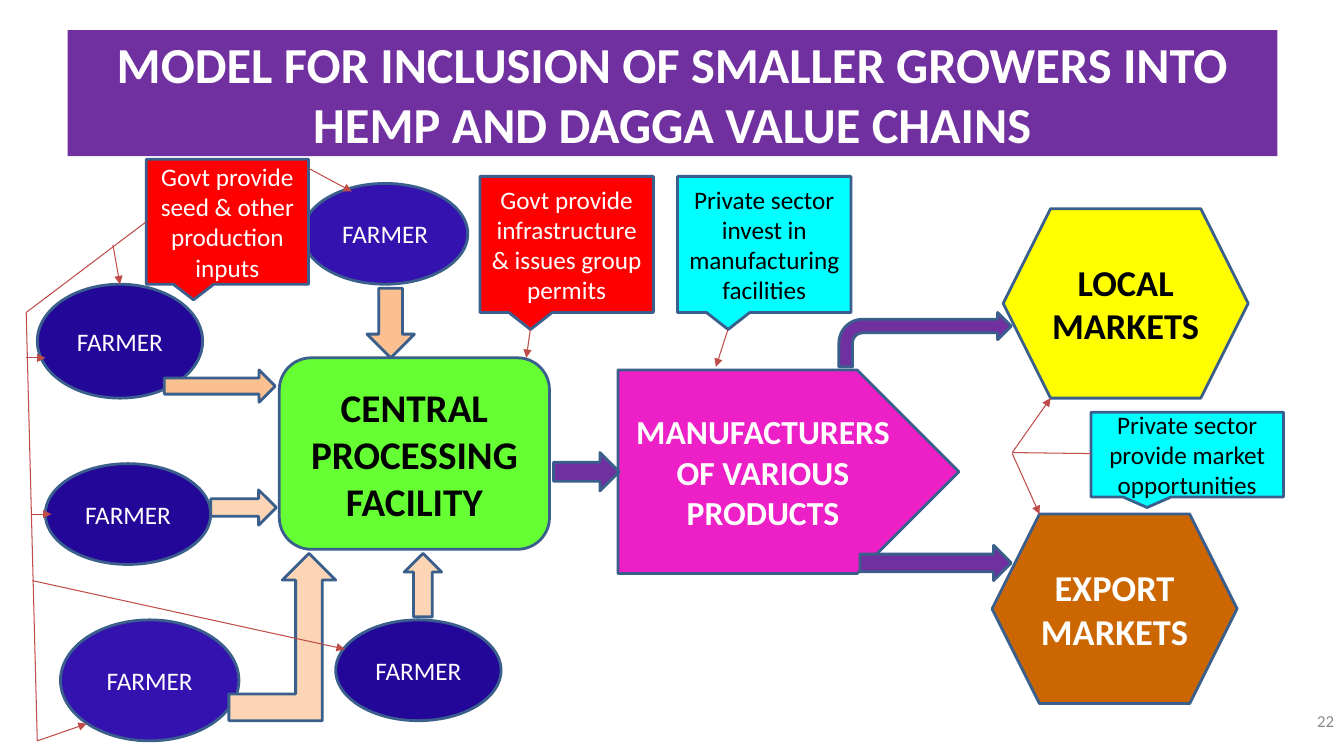
from typing import NamedTuple

import pptx
import pptx.dml.color
import pptx.enum.shapes
import pptx.enum.text
import pptx.oxml
import pptx.oxml.ns
import pptx.util

Inches = pptx.util.Inches
Pt = pptx.util.Pt
SHAPE = pptx.enum.shapes.MSO_SHAPE
ALIGN = pptx.enum.text.PP_ALIGN
MIDDLE = pptx.enum.text.MSO_ANCHOR.MIDDLE

FONT = "Calibri"
COLORS = {
    "white": "FFFFFF", "black": "000000", "gray": "8C8C8C",
    "outline": "3A5F8C", "link": "BF4C48", "purple": "7030A0",
    "green": "66FF33", "indigo": "3412B0", "navy": "230799",
    "magenta": "ED1FC6", "yellow": "FFFF00", "brown": "CC6600",
    "peach": "FAC090", "light_peach": "FCD5B5",
    "red": "FF0000", "cyan": "00FFFF",
}


class Box(NamedTuple):
    kind: int
    left: float
    top: float
    width: float
    height: float
    fill: str
    text: str = ""
    size: int = 18
    color: str = "white"
    bold: bool = False
    outlined: bool = True


class Link(NamedTuple):
    x1: float
    y1: float
    x2: float
    y2: float
    arrow: bool = True


def farmer(left: float, top: float, width: float, height: float, fill: str) -> Box:
    return Box(SHAPE.OVAL, left, top, width, height, fill, "FARMER")


def callout(left: float, top: float, width: float, height: float,
            fill: str, text: str, color: str) -> Box:
    return Box(SHAPE.RECTANGULAR_CALLOUT, left, top, width, height, fill, text, 18, color)


TITLE = Box(SHAPE.RECTANGLE, 0.67, 0.3, 12, 1.25, "purple",
            "MODEL FOR INCLUSION OF SMALLER GROWERS INTO HEMP AND DAGGA VALUE CHAINS",
            36, "white", True, False)

STAGES = [
    Box(SHAPE.FLOWCHART_ALTERNATE_PROCESS, 2.77, 3.55, 2.68, 1.9, "green",
        "CENTRAL PROCESSING FACILITY", 28, "black", True),
    farmer(3, 1.82, 1.64, 1, "indigo"),
    farmer(0.37, 2.82, 1.64, 1.13, "navy"),
    farmer(0.45, 4.6, 1.64, 1, "navy"),
    farmer(3.33, 6.15, 1.64, 1, "navy"),
    farmer(0.6, 6.15, 1.77, 1.2, "indigo"),
    Box(SHAPE.PENTAGON, 6.13, 3.67, 3.38, 2.02, "magenta",
        "MANUFACTURERS OF VARIOUS PRODUCTS", 24, "white", True),
    Box(SHAPE.HEXAGON, 9.95, 2.07, 2.43, 1.88, "yellow", "LOCAL MARKETS", 26, "black", True),
    Box(SHAPE.HEXAGON, 9.84, 5.1, 2.43, 1.88, "brown", "EXPORT MARKETS", 26, "white", True),
]

FLOWS = [
    Box(SHAPE.RIGHT_ARROW, 5.49, 4.49, 0.65, 0.38, "purple"),
    Box(SHAPE.DOWN_ARROW, 3.64, 2.86, 0.47, 0.69, "peach"),
    Box(SHAPE.UP_ARROW, 4.01, 5.49, 0.37, 0.63, "light_peach"),
    Box(SHAPE.RIGHT_ARROW, 2.09, 4.86, 0.65, 0.35, "light_peach"),
    Box(SHAPE.BENT_ARROW, 8.32, 3.1, 1.71, 0.54, "purple"),
    Box(SHAPE.RIGHT_ARROW, 8.53, 5.41, 1.5, 0.35, "purple"),
    Box(SHAPE.RIGHT_ARROW, 1.63, 3.67, 1.1, 0.32, "peach"),
    Box(SHAPE.BENT_UP_ARROW, 2.27, 5.49, 1.06, 1.66, "light_peach"),
]

CALLOUTS = [
    callout(4.76, 1.75, 1.72, 1.35, "red",
            "Govt provide infrastructure & issues group permits", "white"),
    callout(1.45, 1.58, 1.61, 1.24, "red",
            "Govt provide seed & other production inputs", "white"),
    callout(6.72, 1.75, 1.72, 1.35, "cyan",
            "Private sector invest in manufacturing facilities", "black"),
    callout(10.82, 4.09, 1.91, 0.84, "cyan",
            "Private sector provide market opportunities", "black"),
]

LINKS = [
    Link(1.45, 2.2, 0.26, 3.1, False),
    Link(0.26, 3.1, 0.37, 7.35, False),
    Link(1.12, 2.43, 1.19, 2.82),
    Link(0.26, 3.55, 0.45, 3.55),
    Link(0.32, 5.1, 0.51, 5.1),
    Link(0.32, 5.76, 3.42, 6.44),
    Link(0.37, 7.35, 0.86, 7.18),
    Link(3.06, 1.67, 3.49, 1.9),
    Link(7.22, 3.27, 7.1, 3.64),
    Link(10.82, 4.5, 10.04, 4.49, False),
    Link(10.04, 4.49, 10.42, 3.95),
    Link(10.04, 4.5, 10.31, 5.1),
    Link(5.26, 3.27, 5.22, 3.55),
]


def rgb(name: str) -> pptx.dml.color.RGBColor:
    return pptx.dml.color.RGBColor.from_string(COLORS[name])


def write(sp, text: str, size: int, color: str, bold: bool, align) -> None:
    tf = sp.text_frame
    tf.word_wrap = True
    tf.vertical_anchor = MIDDLE
    p = tf.paragraphs[0]
    p.text = text
    p.alignment = align
    p.font.name = FONT
    p.font.size = Pt(size)
    p.font.bold = bold
    p.font.color.rgb = rgb(color)


def draw_box(s, box: Box) -> None:
    sp = s.shapes.add_shape(box.kind, Inches(box.left), Inches(box.top),
                            Inches(box.width), Inches(box.height))
    sp.shadow.inherit = False
    sp.fill.solid()
    sp.fill.fore_color.rgb = rgb(box.fill)
    if box.outlined:
        sp.line.color.rgb = rgb("outline")
        sp.line.width = Pt(2)
    else:
        sp.line.fill.background()
    if box.text:
        write(sp, box.text, box.size, box.color, box.bold, ALIGN.CENTER)


def draw_link(s, link: Link) -> None:
    cx = s.shapes.add_connector(pptx.enum.shapes.MSO_CONNECTOR.STRAIGHT,
                                Inches(link.x1), Inches(link.y1),
                                Inches(link.x2), Inches(link.y2))
    cx.line.color.rgb = rgb("link")
    cx.line.width = Pt(0.75)
    if link.arrow:
        tail = pptx.oxml.parse_xml(
            f'<a:tailEnd {pptx.oxml.ns.nsdecls("a")} type="triangle"/>')
        cx.line._get_or_add_ln().append(tail)
    cx._element.spPr.append(
        pptx.oxml.parse_xml(f'<a:effectLst {pptx.oxml.ns.nsdecls("a")}/>'))


def draw_page_number(s, number: str) -> None:
    sp = s.shapes.add_textbox(Inches(10.22), Inches(6.95), Inches(3.11), Inches(0.4))
    write(sp, number, 12, "gray", False, ALIGN.RIGHT)


def main() -> None:
    prs = pptx.Presentation()
    prs.slide_width = Inches(13.33)
    prs.slide_height = Inches(7.5)
    s = prs.slides.add_slide(prs.slide_layouts[6])
    draw_box(s, TITLE)
    draw_page_number(s, "22")
    for box in STAGES + FLOWS + CALLOUTS:
        draw_box(s, box)
    for link in LINKS:
        draw_link(s, link)
    prs.save("out.pptx")


if __name__ == "__main__":
    main()
